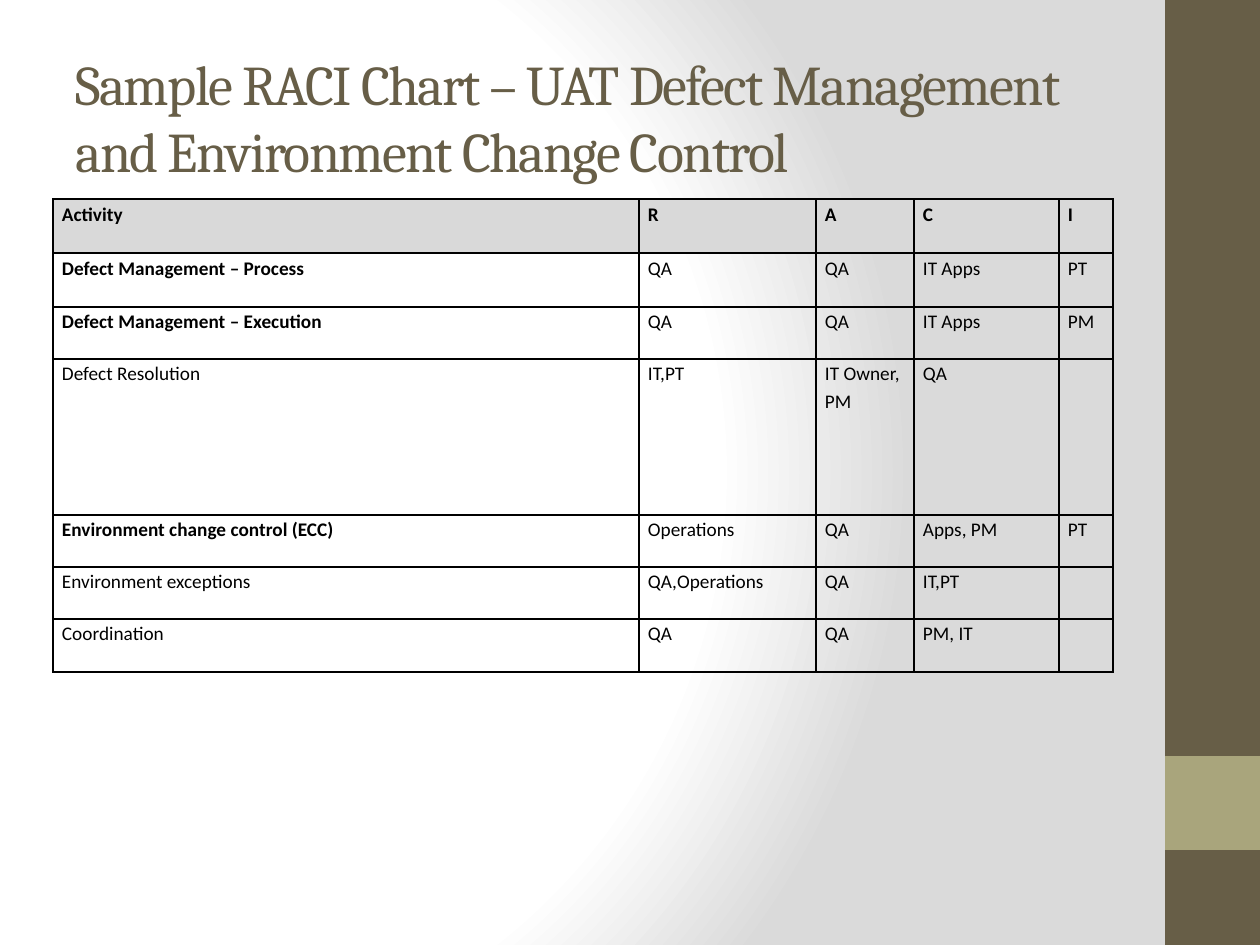
from pptx import Presentation
from pptx.dml.color import RGBColor
from pptx.enum.shapes import MSO_SHAPE
from pptx.enum.text import MSO_ANCHOR, PP_ALIGN
from pptx.oxml import parse_xml
from pptx.oxml.ns import nsdecls
from pptx.util import Emu, Pt

PIXELS_PER_INCH = 126
BROWN, OLIVE, HEADER_GREY, BLACK = "675E47", "A9A57C", "D9D9D9", "000000"

TITLE = "Sample RACI Chart – UAT Defect Management and Environment Change Control"
COLUMN_WIDTHS = [586, 177, 98, 145, 54]
ROW_HEIGHTS = [54, 54, 52, 156, 52, 52, 53]
RACI_ROWS = [
    ["Activity", "R", "A", "C", "I"],
    ["Defect Management – Process", "QA", "QA", "IT Apps", "PT"],
    ["Defect Management – Execution", "QA", "QA", "IT Apps", "PM"],
    ["Defect Resolution", "IT,PT", "IT Owner, PM", "QA", ""],
    ["Environment change control (ECC)", "Operations", "QA", "Apps, PM", "PT"],
    ["Environment exceptions", "QA,Operations", "QA", "IT,PT", ""],
    ["Coordination", "QA", "QA", "PM, IT", ""],
]
BOLD_ACTIVITY_ROWS = {1, 2, 4}


def px(length):
    return Emu(round(length * 914400 / PIXELS_PER_INCH))


def color(hex_value):
    return RGBColor.from_string(hex_value)


def format_font(font, name, size, hex_value, bold=False):
    font.name = name
    font.size = Pt(size)
    font.bold = bold
    font.color.rgb = color(hex_value)


def set_background(slide):
    stops = "".join(
        f'<a:gs pos="{position * 1000}"><a:srgbClr val="{hex_value}"/></a:gs>'
        for position, hex_value in [(0, "FFFFFF"), (75, "FFFFFF"), (100, "DADADA")]
    )
    slide.element.cSld.insert(0, parse_xml(
        f'<p:bg {nsdecls("p", "a")}><p:bgPr><a:gradFill rotWithShape="1">'
        f'<a:gsLst>{stops}</a:gsLst><a:path path="circle">'
        '<a:fillToRect l="20000" t="50000" r="100000" b="50000"/></a:path>'
        '</a:gradFill><a:effectLst/></p:bgPr></p:bg>'
    ))


def add_block(slide, left, top, width, height, hex_value):
    shape = slide.shapes.add_shape(
        MSO_SHAPE.RECTANGLE, px(left), px(top), px(width), px(height))
    shape.shadow.inherit = False
    shape.fill.solid()
    shape.fill.fore_color.rgb = color(hex_value)
    shape.line.fill.background()


def set_title(slide):
    title = slide.shapes.title
    title.left, title.top, title.width, title.height = px(63), px(38), px(1050), px(157)
    text_frame = title.text_frame
    text_frame.text = TITLE
    text_frame.word_wrap = True
    text_frame.vertical_anchor = MSO_ANCHOR.MIDDLE
    paragraph = text_frame.paragraphs[0]
    paragraph.alignment = PP_ALIGN.LEFT
    run = paragraph.runs[0]
    format_font(run.font, "Cambria", 32, BROWN)
    run.font._element.set("spc", "-100")


def set_borders(cell):
    properties = cell._tc.get_or_add_tcPr()
    for index, side in enumerate(["lnL", "lnR", "lnT", "lnB"]):
        properties.insert(index, parse_xml(
            f'<a:{side} {nsdecls("a")} w="{Pt(1)}"><a:solidFill>'
            f'<a:srgbClr val="{BLACK}"/></a:solidFill></a:{side}>'
        ))


def fill_cell(cell, text, is_header, bold):
    cell.margin_left = cell.margin_right = px(9)
    cell.margin_top = cell.margin_bottom = 0
    cell.text_frame.text = text
    paragraph = cell.text_frame.paragraphs[0]
    paragraph.line_spacing = 1.15
    for run in paragraph.runs:
        format_font(run.font, "Calibri", 11, BLACK, bold)
    if is_header:
        cell.fill.solid()
        cell.fill.fore_color.rgb = color(HEADER_GREY)
    else:
        cell.fill.background()
    set_borders(cell)


def add_raci_table(slide, left, top):
    table = slide.shapes.add_table(
        len(ROW_HEIGHTS), len(COLUMN_WIDTHS), px(left), px(top),
        px(sum(COLUMN_WIDTHS)), px(sum(ROW_HEIGHTS))).table
    table.first_row = table.horz_banding = False
    for column, width in zip(table.columns, COLUMN_WIDTHS):
        column.width = px(width)
    for row, height in zip(table.rows, ROW_HEIGHTS):
        row.height = px(height)
    for row_index, texts in enumerate(RACI_ROWS):
        is_header = row_index == 0
        for column_index, text in enumerate(texts):
            is_bold_activity = column_index == 0 and row_index in BOLD_ACTIVITY_ROWS
            fill_cell(table.cell(row_index, column_index), text,
                      is_header, is_header or is_bold_activity)


def main():
    presentation = Presentation()
    presentation.slide_width, presentation.slide_height = px(1260), px(945)
    slide = presentation.slides.add_slide(presentation.slide_layouts[5])

    # Background and side band
    set_background(slide)
    add_block(slide, 1165, 0, 95, 945, BROWN)
    add_block(slide, 1165, 756, 95, 94, OLIVE)

    # Title and responsibility table
    set_title(slide)
    add_raci_table(slide, 53, 199)

    presentation.save("out.pptx")


if __name__ == "__main__":
    main()
